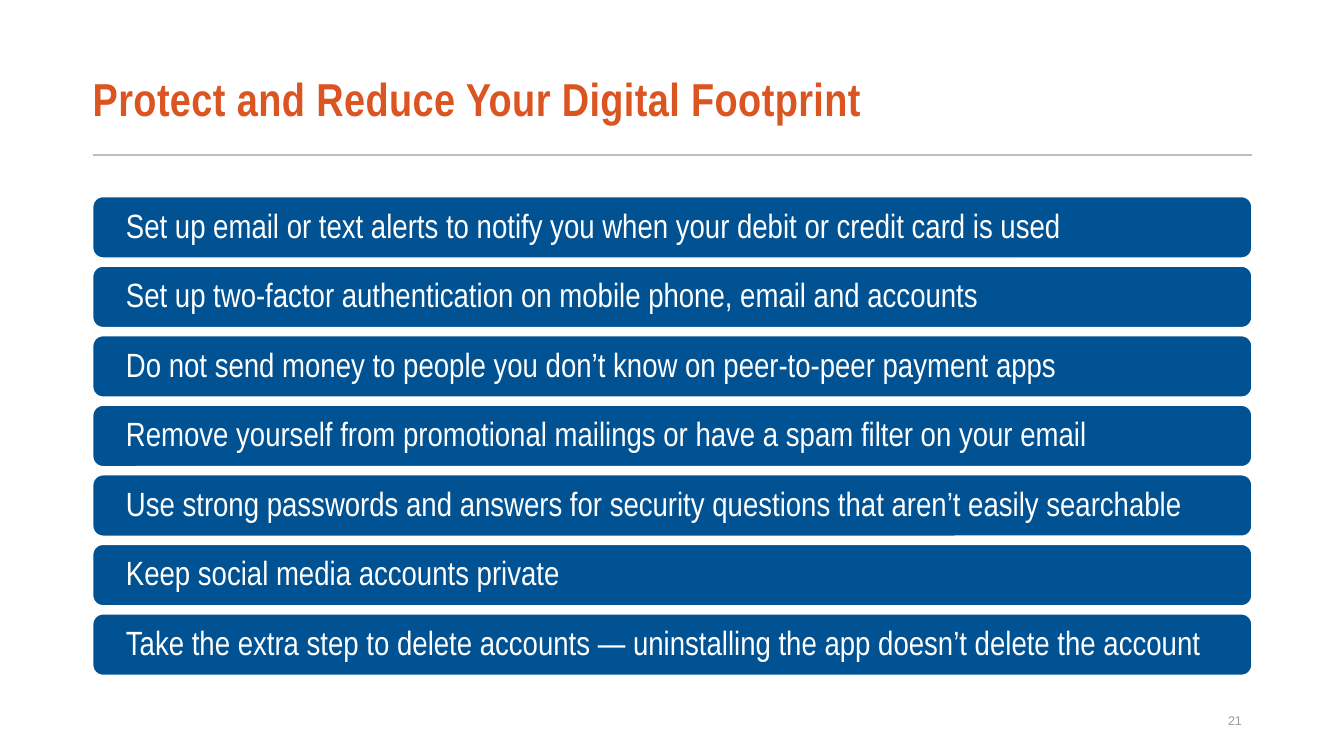
from lxml import etree
from pptx import Presentation
from pptx.dml.color import RGBColor
from pptx.enum import shapes, text
from pptx.oxml import ns
from pptx.util import Pt

COLORS = {"title": "DA5521", "rule": "BDBDBD", "bar": "005293",
          "white": "FFFFFF", "number": "9B9B9B"}
LEFT, WIDTH = 66.24, 828
TIPS = [
    "Set up email or text alerts to notify you when your debit or credit card is used",
    "Set up two-factor authentication on mobile phone, email and accounts",
    "Do not send money to people you don’t know on peer-to-peer payment apps",
    "Remove yourself from promotional mailings or have a spam filter on your email",
    "Use strong passwords and answers for security questions that aren’t easily searchable",
    "Keep social media accounts private",
    "Take the extra step to delete accounts — uninstalling the app doesn’t delete the account",
]


def color(name):
    return RGBColor.from_string(COLORS[name])


def write(shape, words, font, size, ink, insets, spacing=1.0,
          align=text.PP_ALIGN.LEFT):
    """Fill a shape with one middle-anchored paragraph and return its run."""
    frame = shape.text_frame
    frame.text = words
    frame.word_wrap = True
    frame.vertical_anchor = text.MSO_ANCHOR.MIDDLE
    (frame.margin_left, frame.margin_top,
     frame.margin_right, frame.margin_bottom) = map(Pt, insets)
    para = frame.paragraphs[0]
    para.alignment = align
    para.line_spacing = spacing
    span = para.runs[0]
    span.font.name = font
    span.font.size = Pt(size)
    span.font.color.rgb = color(ink)
    return span


def add_header(page, left, top, width, height):
    # Title
    box = page.shapes.add_textbox(Pt(left), Pt(top), Pt(width), Pt(height))
    span = write(box, "Protect and Reduce Your Digital Footprint",
                 "Arial Narrow", 33, "title", (0, 3.6, 7.2, 3.6), 0.87)
    span.font.bold = True
    span.font._element.set("spc", "30")
    # Rule below the title
    rule_y = Pt(top + height + 3.6)
    rule = page.shapes.add_connector(shapes.MSO_CONNECTOR.STRAIGHT, Pt(left),
                                     rule_y, Pt(left + width), rule_y)
    rule.line.color.rgb = color("rule")
    rule.line.width = Pt(1.5)
    etree.SubElement(rule._element.spPr, ns.qn("a:effectLst"))


def add_tips(page, left, top, width, height, gap=5.76):
    # Equal bars, one for each tip
    bar_height = (height - gap * (len(TIPS) - 1)) / len(TIPS)
    for row, tip in enumerate(TIPS):
        bar = page.shapes.add_shape(
            shapes.MSO_SHAPE.ROUNDED_RECTANGLE, Pt(left),
            Pt(top + row * (bar_height + gap)), Pt(width), Pt(bar_height))
        bar.shadow.inherit = False
        bar.fill.solid()
        bar.fill.fore_color.rgb = color("bar")
        bar.line.color.rgb = color("white")
        bar.line.width = Pt(1)
        write(bar, tip, "Arial Narrow", 24, "white", (21.6, 7.2, 7.2, 7.2), 0.9)


def add_page_number(page, left, top, width, height):
    box = page.shapes.add_textbox(Pt(left), Pt(top), Pt(width), Pt(height))
    write(box, "21", "Arial", 9, "number", (7.2, 3.6, 7.2, 3.6),
          align=text.PP_ALIGN.RIGHT)


def main():
    deck = Presentation()
    deck.slide_width, deck.slide_height = Pt(960), Pt(540)
    page = deck.slides.add_slide(deck.slide_layouts[6])
    page.background.fill.solid()
    page.background.fill.fore_color.rgb = color("white")
    add_header(page, LEFT, 38.88, WIDTH, 68.4)
    add_tips(page, LEFT, 140.4, WIDTH, 342)
    add_page_number(page, LEFT + WIDTH - 216, 500.4, 216, 28.8)
    deck.save("out.pptx")


if __name__ == "__main__":
    main()
